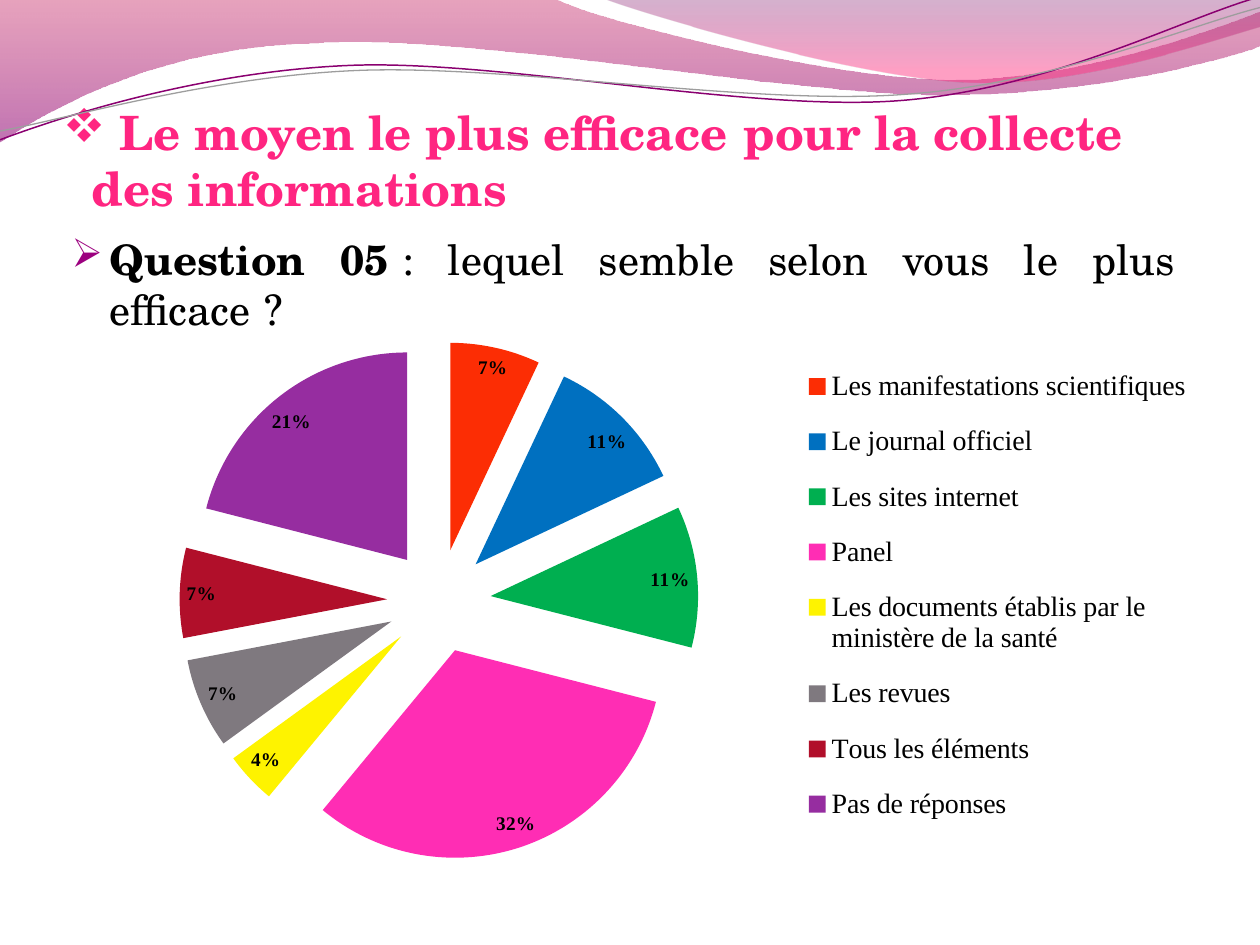
from lxml.etree import SubElement
from pptx import Presentation
from pptx.chart.data import CategoryChartData
from pptx.dml.color import RGBColor
from pptx.enum.chart import XL_CHART_TYPE as ChartType
from pptx.enum.chart import XL_LABEL_POSITION as LabelPosition
from pptx.enum.chart import XL_LEGEND_POSITION as LegendPosition
from pptx.enum.text import MSO_ANCHOR as Anchor
from pptx.enum.text import MSO_AUTO_SIZE as AutoSize
from pptx.enum.text import PP_ALIGN as Align
from pptx.oxml import parse_xml
from pptx.oxml.ns import nsdecls, qn
from pptx.util import Inches, Pt

WIDTH, HEIGHT = 10, 7.5
SERIF, SCHOOL = "Times New Roman", "TeX Gyre Schola"

# Wave outlines: a start, then points (2 numbers) or Bezier curves (6 numbers)
WIDE_WAVE = [
    (0, 0), (4.4, -0.01), (4.76, 0.17, 6.64, 0.63, 7.58, 0.63),
    (8.53, 0.63, 9.58, 0.26, 10, 0.09), (10.01, 0.36),
    (9.83, 0.44, 8.7, 0.76, 7.46, 0.75), (6.22, 0.75, 3.82, 0.28, 2.57, 0.34),
    (1.29, 0.36, 0.46, 0.83, -0.01, 1.13), (0, 0),
]
RIGHT_WAVE = [
    (4.79, -0.01), (5.09, 0.11, 6.82, 0.62, 7.69, 0.65),
    (8.56, 0.69, 9.61, 0.32, 10, 0.21), (10, 0), (4.79, -0.01),
]
PURPLE_CURVE = [
    (0, 1.11), (0.48, 0.93, 1.58, 0.57, 2.77, 0.52),
    (3.95, 0.47, 5.93, 0.89, 7.13, 0.8), (8.33, 0.71, 9.38, 0.15, 9.98, -0.02),
]
GREY_CURVE = [
    (0, 1.04), (0.47, 0.96, 1.64, 0.61, 2.83, 0.56),
    (4.03, 0.51, 5.97, 0.84, 7.17, 0.75), (8.36, 0.67, 9.41, 0.21, 10, 0.06),
]

# Answer, percentage, slice colour
ANSWERS = [
    ("Les manifestations scientifiques", 7, "FC2D04"),
    ("Le journal officiel", 11, "0070C0"),
    ("Les sites internet", 11, "00AF50"),
    ("Panel", 32, "FF2DB4"),
    ("Les documents établis par le ministère de la santé", 4, "FEF300"),
    ("Les revues", 7, "7F797F"),
    ("Tous les éléments", 7, "B10F2A"),
    ("Pas de réponses", 21, "962DA0"),
]


def rgb(color):
    return RGBColor.from_string(color)


def style_font(font, color="000000", **values):
    for name, value in values.items():
        setattr(font, name, value)
    font.color.rgb = rgb(color)


def place(shape, left, top, width, height):
    """Position a shape with shares of the slide's size."""
    shape.left, shape.width = Inches(left * WIDTH), Inches(width * WIDTH)
    shape.top, shape.height = Inches(top * HEIGHT), Inches(height * HEIGHT)


# Decorative waves
def add_outline(page, outline, closed):
    """Draw an outline, joining each curve's three segments into one Bezier."""
    start, *steps = outline
    points = [(Inches(step[i]), Inches(step[i + 1]))
              for step in steps for i in range(0, len(step), 2)]
    builder = page.shapes.build_freeform(Inches(start[0]), Inches(start[1]))
    builder.add_line_segments(points, close=closed)
    shape = builder.convert_to_shape()
    shape.shadow.inherit = False

    segments = iter(list(shape.element.spPr.iter(qn("a:lnTo"))))
    for step in steps:
        first = next(segments)
        if len(step) == 6:
            first.tag = qn("a:cubicBezTo")
            for _ in range(2):
                extra = next(segments)
                first.append(extra[0])
                extra.getparent().remove(extra)
    return shape


def add_wave(page, outline, stops):
    """Add a filled wave; stops hold position, colour and opacity percent."""
    shape = add_outline(page, outline, True)
    shape.line.fill.background()
    shape.fill.gradient()
    shape.fill.gradient_angle = 270
    for stop, (position, color, _) in zip(shape.fill.gradient_stops, stops):
        stop.position = position
        stop.color.rgb = rgb(color)
    tints = shape.element.spPr.iter(qn("a:srgbClr"))
    for tint, (_, _, opacity) in zip(list(tints), stops):
        SubElement(tint, qn("a:alpha"), val=str(opacity * 1000))


def add_curve(page, outline, color, width):
    shape = add_outline(page, outline, False)
    shape.fill.background()
    shape.line.color.rgb = rgb(color)
    shape.line.width = Pt(width)


# Bulleted text
def set_bullet(para, char, color, size, indent):
    """Add a hanging bullet; char is a code of the Wingdings symbol font."""
    props = para._p.get_or_add_pPr()
    props.set("marL", str(Inches(indent)))
    props.set("indent", str(-Inches(indent)))
    SubElement(SubElement(props, qn("a:buClr")), qn("a:srgbClr"), val=color)
    SubElement(props, qn("a:buSzPct"), val=str(size * 1000))
    SubElement(props, qn("a:buFont"), typeface="Wingdings", charset="2")
    SubElement(props, qn("a:buChar"), char=char)


def write_para(frame, spans, align, bullet, **frame_values):
    """Fill a text frame with one bulleted paragraph of (text, format) spans."""
    values = {"word_wrap": True, "auto_size": AutoSize.NONE, **frame_values}
    for name, value in values.items():
        setattr(frame, name, value)
    para = frame.paragraphs[0]
    para.alignment = align
    para.line_spacing = 1.0
    para.space_before = Pt(0)
    for text, style in spans:
        span = para.add_run()
        span.text = text
        style_font(span.font, name=SCHOOL, **style)
    set_bullet(para, *bullet)


# Pie chart
def set_layout(parent, x, y, w, h, inner=False):
    """Give a chart part a fixed place, in shares of the chart's size."""
    for old in parent.findall(qn("c:layout")):
        parent.remove(old)
    target = '<c:layoutTarget val="inner"/>' if inner else ""
    sizes = "".join(f'<c:{key} val="{value}"/>' for key, value in zip("xywh", (x, y, w, h)))
    layout = parse_xml(
        f'<c:layout {nsdecls("c")}><c:manualLayout>{target}<c:xMode val="edge"/>'
        f'<c:yMode val="edge"/>{sizes}</c:manualLayout></c:layout>')
    parent.insert(0 if inner else 1, layout)


def add_pie(page):
    data = CategoryChartData()
    data.categories = [name for name, _, _ in ANSWERS]
    data.add_series("Series 1", [value for _, value, _ in ANSWERS])
    frame = page.shapes.add_chart(ChartType.PIE, 0, 0, 0, 0, data)
    place(frame, 0.062, 0.344, 0.895, 0.584)
    chart = frame.chart
    chart.has_title = False
    style_font(chart.font, name="TeX Gyre Pagella", size=Pt(10))

    plot = chart.plots[0]
    plot.vary_by_categories = True
    series = plot.series[0]
    for index, (_, _, color) in enumerate(ANSWERS):
        fill = series.points[index].format.fill
        fill.solid()
        fill.fore_color.rgb = rgb(color)
    explosion = parse_xml(f'<c:explosion {nsdecls("c")} val="25"/>')
    series._element.find(qn("c:tx")).addnext(explosion)

    plot.has_data_labels = True
    labels = plot.data_labels
    values = {"show_percentage": True, "show_value": False, "number_format": "0%",
              "number_format_is_linked": False, "position": LabelPosition.BEST_FIT}
    for name, value in values.items():
        setattr(labels, name, value)
    style_font(labels.font, name=SERIF, size=Pt(11), bold=True)

    chart.has_legend = True
    legend = chart.legend
    legend.position = LegendPosition.RIGHT
    legend.include_in_layout = False
    style_font(legend.font, name=SERIF, size=Pt(16))
    set_layout(legend._element, 0.64, 0.04, 0.35, 0.9)
    set_layout(chart._chartSpace.chart.plotArea, 0.09, 0.03, 0.46, 0.94, inner=True)


def main():
    deck = Presentation()
    deck.slide_width, deck.slide_height = Inches(WIDTH), Inches(HEIGHT)
    page = deck.slides.add_slide(deck.slide_layouts[5])

    add_wave(page, WIDE_WAVE, [(0, "C9326D", 45), (1, "8E0073", 55)])
    add_wave(page, RIGHT_WAVE, [(0, "73005E", 30), (0.8, "FF2D7F", 45)])
    add_curve(page, PURPLE_CURVE, "8A0070", 0.85)
    add_curve(page, GREY_CURVE, "9D9D9D", 0.75)

    # Title
    title = page.shapes.title
    place(title, 0.05, 0.093, 0.9, 0.136)
    heading = {"size": Pt(27), "bold": True, "color": "FF2581"}
    write_para(title.text_frame,
               [(" Le moyen le plus efficace\u00a0pour la collecte des informations", heading)],
               Align.LEFT, ("v", "FF2581", 100, 0.23), vertical_anchor=Anchor.BOTTOM,
               margin_left=0, margin_right=0, margin_bottom=0)

    # Question
    box = page.shapes.add_textbox(0, 0, 0, 0)
    place(box, 0.047, 0.24, 0.895, 0.125)
    question = [("Question 05\u00a0", {"size": Pt(24), "bold": True}),
                (": lequel semble selon vous le plus efficace\u00a0?",
                 {"size": Pt(24), "bold": False})]
    write_para(box.text_frame, question, Align.JUSTIFY, ("Ø", "9C007F", 95, 0.3))

    add_pie(page)
    deck.save("out.pptx")


if __name__ == "__main__":
    main()
